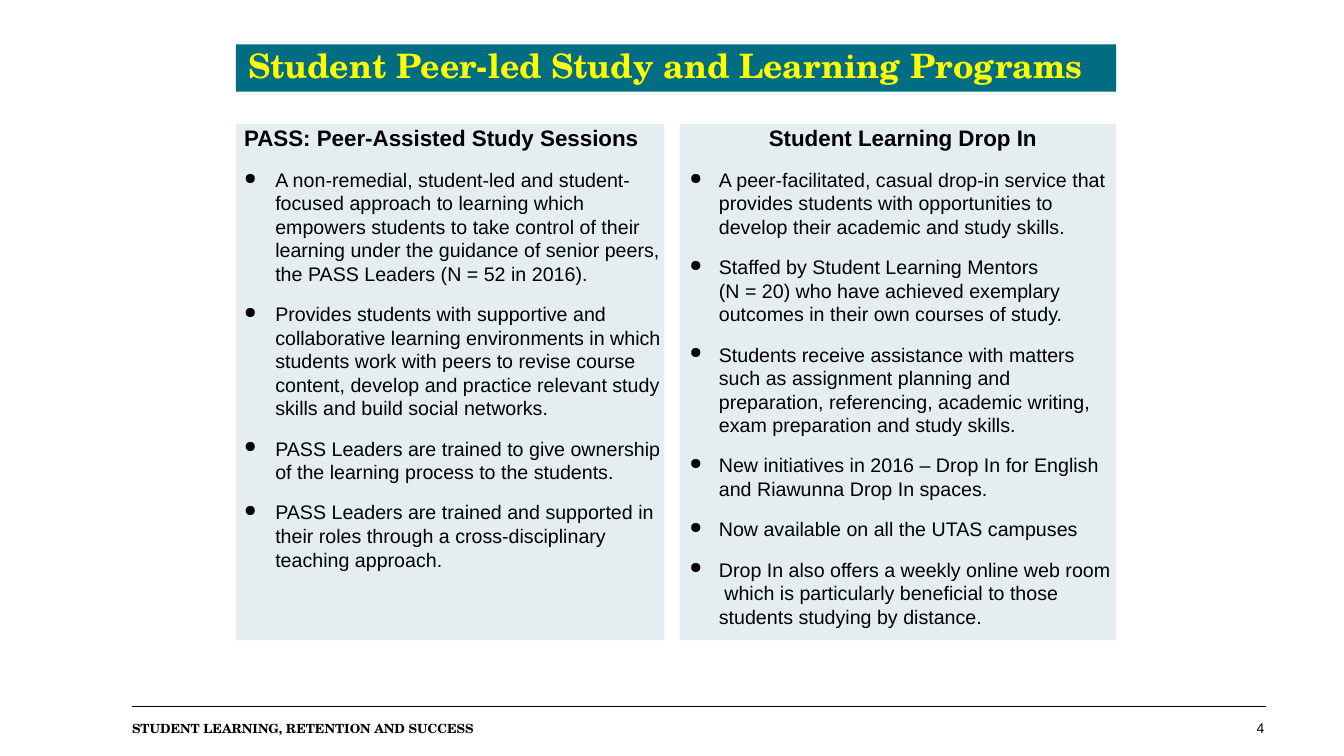
import copy
import pptx
import pptx.util
import pptx.dml.color
import pptx.enum.shapes
import pptx.enum.text
import pptx.oxml
import pptx.oxml.ns

TITLE = "Student Peer-led Study and Learning Programs"
PROGRAMS = [
    {
        "heading": "PASS: Peer-Assisted Study Sessions",
        "points": [
            "A non-remedial, student-led and student- focused approach to learning which empowers students to take control of their learning under the guidance of senior peers, the PASS Leaders (N = 52 in 2016).",
            "Provides students with supportive and collaborative learning environments in which students work with peers to revise course content, develop and practice relevant study skills and build social networks.",
            "PASS Leaders are trained to give ownership of the learning process to the students.",
            "PASS Leaders are trained and supported in their roles through a cross-disciplinary teaching approach.",
        ],
        "left": 2.34, "width": 4.25, "hanging": 0.31, "align": "LEFT",
    },
    {
        "heading": "Student Learning Drop In",
        "points": [
            "A peer-facilitated, casual drop-in service that provides students with opportunities to develop their academic and study skills.",
            "Staffed by Student Learning Mentors \v(N = 20) who have achieved exemplary outcomes in their own courses of study.",
            "Students receive assistance with matters such as assignment planning and preparation, referencing, academic writing, exam preparation and study skills.",
            "New initiatives in 2016 – Drop In for English and Riawunna Drop In spaces.",
            "Now available on all the UTAS campuses",
            "Drop In also offers a weekly online web room  which is particularly beneficial to those students studying by distance.",
        ],
        "left": 6.74, "width": 4.33, "hanging": 0.29, "align": "CENTER",
    },
]
FOOTER = "STUDENT LEARNING, RETENTION AND SUCCESS"
PAGE_NUMBER = "4"

Inches, Pt = pptx.util.Inches, pptx.util.Pt
RGBColor = pptx.dml.color.RGBColor
ALIGN = pptx.enum.text.PP_ALIGN
ANCHOR = pptx.enum.text.MSO_ANCHOR
BLACK = RGBColor(0x00, 0x00, 0x00)
YELLOW = RGBColor(0xFF, 0xFF, 0x00)
TEAL = RGBColor(0x00, 0x6D, 0x82)
PALE = RGBColor(0xE4, 0xED, 0xF0)

SERIF, SANS = "TeX Gyre Schola", "Arial"
TITLE_FONT = {"name": SERIF, "size": Pt(24), "bold": True}
HEADING_FONT = {"name": SANS, "size": Pt(16), "bold": True}
POINT_FONT = {"name": SANS, "size": Pt(14), "bold": False}
FOOTER_FONT = {"name": SERIF, "size": Pt(9), "bold": True}
NUMBER_FONT = {"name": SANS, "size": Pt(10), "bold": False}

WIDTH, HEIGHT = 13.33, 7.5
MARGIN_LEFT, MARGIN_RIGHT = 1.31, 12.56
PANEL_TOP, PANEL_HEIGHT = 1.23, 5.12
TEXT_INDENT = 0.39
TITLE_INSET = 0.12


def set_all(target, values):
    for name, value in values.items():
        setattr(target, name, value)


def prepare_frame(box, anchor=ANCHOR.TOP, inset=0):
    frame = box.text_frame
    set_all(frame, {"word_wrap": True, "vertical_anchor": anchor, "margin_left": Inches(inset),
                    "margin_right": 0, "margin_top": 0, "margin_bottom": 0})
    return frame


def add_panel(page, area, fill):
    box = page.shapes.add_shape(pptx.enum.shapes.MSO_SHAPE.RECTANGLE, *map(Inches, area))
    box.shadow.inherit = False
    box.fill.solid()
    box.fill.fore_color.rgb = fill
    box.line.fill.background()
    return box


def write(para, text, font, color=BLACK, align=ALIGN.LEFT):
    para.text = text
    para.alignment = align
    for span in para.runs:
        set_all(span.font, font)
        span.font.color.rgb = color
    for line_break in para._p.findall(pptx.oxml.ns.qn("a:br")):
        line_break.append(copy.deepcopy(para.runs[0]._r.rPr))


def indent(para, hanging, bullet):
    settings = para._p.get_or_add_pPr()
    settings.set("marL", str(Inches(TEXT_INDENT)))
    settings.set("indent", str(-Inches(hanging)))
    marks = ['buSzPct val="80000"', 'buChar char="●"'] if bullet else ["buNone"]
    for mark in marks:
        settings.append(pptx.oxml.parse_xml(f'<a:{mark} {pptx.oxml.ns.nsdecls("a")}/>'))


def add_program(page, program):
    area = (program["left"], PANEL_TOP, program["width"], PANEL_HEIGHT)
    frame = prepare_frame(add_panel(page, area, PALE))
    for number, text in enumerate([program["heading"], *program["points"]]):
        para = frame.add_paragraph() if number else frame.paragraphs[0]
        indent(para, program["hanging"], number > 0)
        para.line_spacing = 1.0
        para.space_before = Pt(12 if number else 0)
        if number:
            write(para, text, POINT_FONT)
        else:
            write(para, text, HEADING_FONT, align=ALIGN[program["align"]])


def add_label(page, area, text, font, align):
    box = page.shapes.add_textbox(*map(Inches, area))
    write(prepare_frame(box).paragraphs[0], text, font, align=align)


def add_rule(page, top):
    ends = map(Inches, (MARGIN_LEFT, top, MARGIN_RIGHT, top))
    rule = page.shapes.add_connector(pptx.enum.shapes.MSO_CONNECTOR.STRAIGHT, *ends)
    rule.line.color.rgb = BLACK
    rule.line.width = Pt(0.5)
    effects = f'<a:effectLst {pptx.oxml.ns.nsdecls("a")}/>'
    rule._element.spPr.append(pptx.oxml.parse_xml(effects))


def main():
    deck = pptx.Presentation()
    set_all(deck, {"slide_width": Inches(WIDTH), "slide_height": Inches(HEIGHT)})
    page = deck.slides.add_slide(deck.slide_layouts[6])

    add_rule(page, 7.01)
    first, last = PROGRAMS[0], PROGRAMS[-1]
    title_width = last["left"] + last["width"] - first["left"]
    title = add_panel(page, (first["left"], 0.44, title_width, 0.47), TEAL)
    para = prepare_frame(title, ANCHOR.MIDDLE, TITLE_INSET).paragraphs[0]
    para.line_spacing = Pt(24)
    write(para, TITLE, TITLE_FONT, YELLOW)

    for program in PROGRAMS:
        add_program(page, program)

    add_label(page, (MARGIN_LEFT, 7.15, 10.34, 0.21), FOOTER, FOOTER_FONT, ALIGN.LEFT)
    add_label(page, (MARGIN_RIGHT - 0.54, 7.14, 0.52, 0.22), PAGE_NUMBER, NUMBER_FONT, ALIGN.RIGHT)
    deck.save("out.pptx")


if __name__ == "__main__":
    main()
